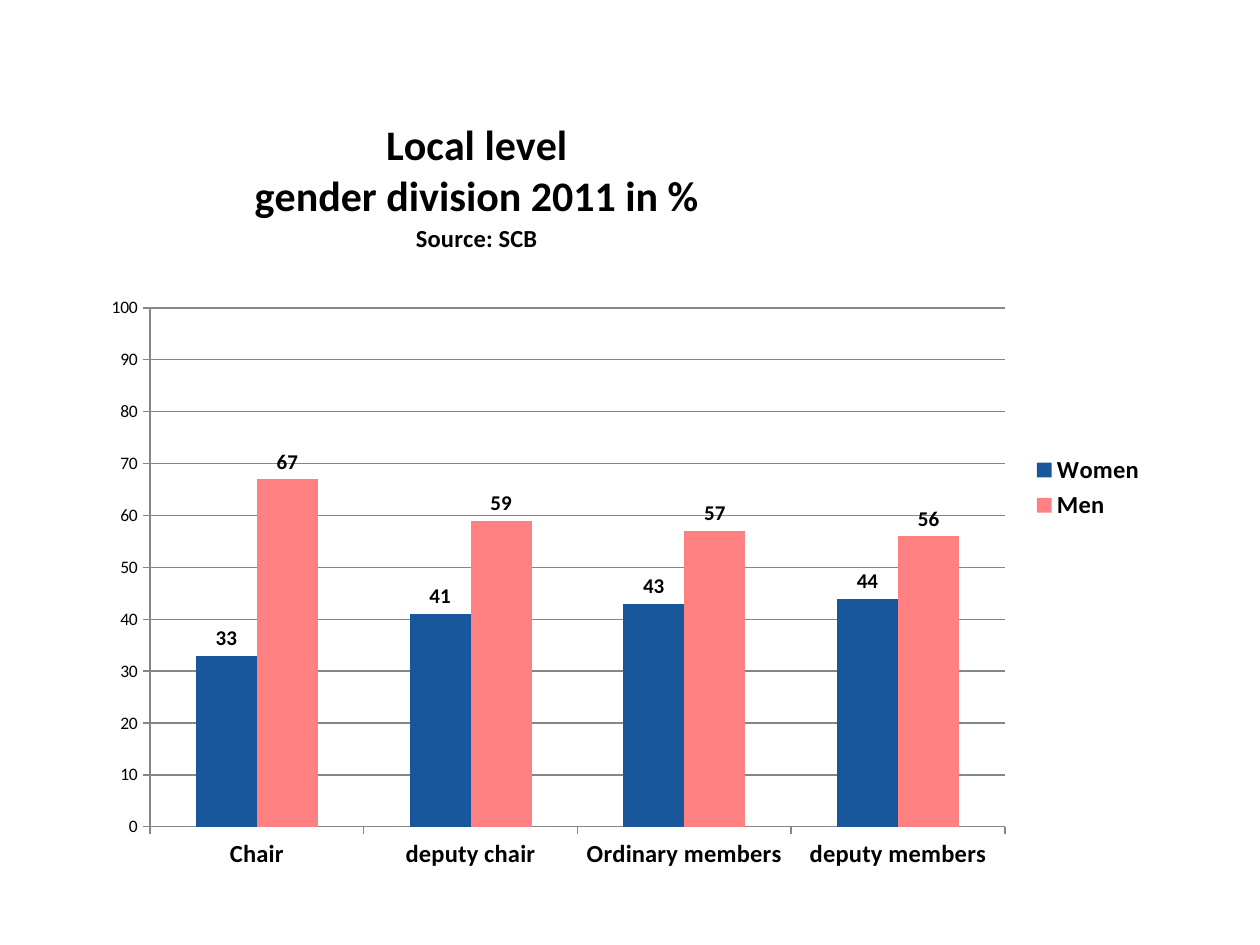
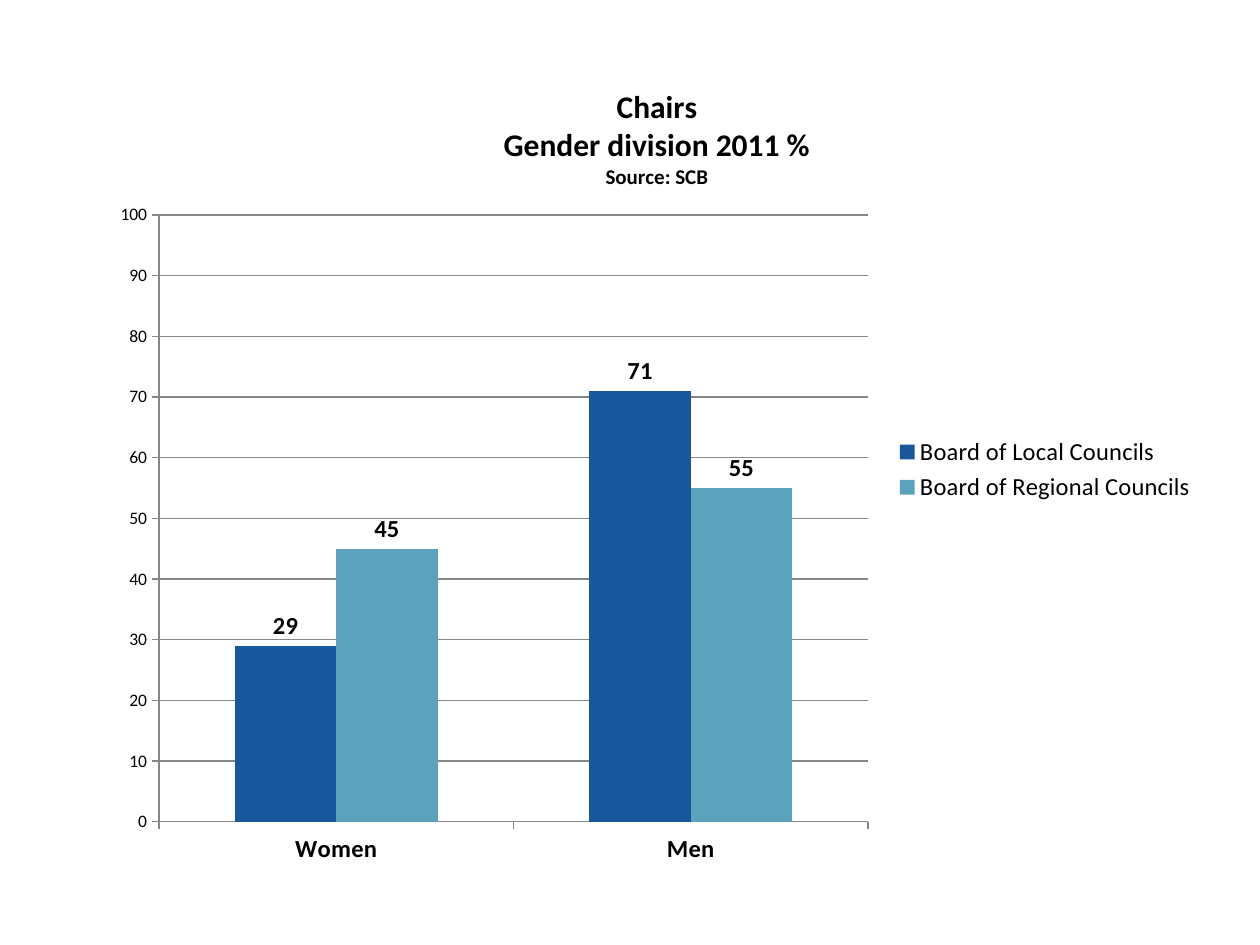
import pptx
import pptx.chart.data
import pptx.dml.color
import pptx.enum.chart
import pptx.oxml
import pptx.oxml.ns
import pptx.util
from dataclasses import dataclass

PX = 914400 / 126
SLIDE_SIZE = (1260, 945)


@dataclass(frozen=True)
class Theme:
    font: str = "Calibri"
    text: str = "000000"
    line: str = "868686"
    blue: str = "18579B"
    pink: str = "FF8080"
    teal: str = "5BA2BC"
    base_size: int = 10
    label_size: int = 14
    line_width: float = 0.75


THEME = Theme()

DIVISIONS = [
    {
        "heading": [("Local level", 24), ("gender division 2011 in %", 24), ("Source: SCB", 14)],
        "positions": ["Chair", "deputy chair", "Ordinary members", "deputy members"],
        "groups": [
            ("Women", THEME.blue, [33, 41, 43, 44]),
            ("Men", THEME.pink, [67, 59, 57, 56]),
        ],
        "frame": (91, 84, 1071, 801),
        "plot": (150, 308, 855, 519),
        "heading_at": (251, 115),
        "legend_at": (1029, 450),
        "value_size": 12,
        "legend_bold": True,
    },
    {
        "heading": [("Chairs", 18), ("Gender division 2011 %", 18), ("Source: SCB", 12)],
        "positions": ["Women", "Men"],
        "groups": [
            ("Board of Local Councils", THEME.blue, [29, 71]),
            ("Board of Regional Councils", THEME.teal, [45, 55]),
        ],
        "frame": (98, 52, 1108, 829),
        "plot": (159, 215, 709, 607),
        "heading_at": (500, 82),
        "legend_at": (892, 432),
        "value_size": 14,
        "legend_bold": False,
    },
]


def px(length):
    return pptx.util.Emu(round(length * PX))


def rgb(color):
    return pptx.dml.color.RGBColor.from_string(color)


def apply(target, **values):
    for name, value in values.items():
        setattr(target, name, value)


def style_font(font, size, bold=False):
    apply(font, name=THEME.font, size=pptx.util.Pt(size), bold=bold)
    font.color.rgb = rgb(THEME.text)


def style_line(line):
    line.color.rgb = rgb(THEME.line)
    line.width = pptx.util.Pt(THEME.line_width)


def place(chart, part, after, frame, box):
    qn = pptx.oxml.ns.qn
    parent = chart.element.find(".//" + qn(part))
    for old in parent.findall(qn("c:layout")):
        parent.remove(old)
    left, top, width, height = frame
    fractions = [(box[0] - left) / width, (box[1] - top) / height]
    fractions += [length / whole for length, whole in zip(box[2:], (width, height))]
    target = '<c:layoutTarget val="inner"/>' if len(box) == 4 else ""
    modes = '<c:xMode val="edge"/><c:yMode val="edge"/>'
    values = "".join(f'<c:{key} val="{value:.4f}"/>' for key, value in zip("xywh", fractions))
    layout = pptx.oxml.parse_xml(
        f'<c:layout {pptx.oxml.ns.nsdecls("c")}>'
        f"<c:manualLayout>{target}{modes}{values}</c:manualLayout></c:layout>"
    )
    if after:
        parent.find(qn(after)).addnext(layout)
    else:
        parent.insert(0, layout)


def write_heading(chart, lines):
    chart.has_title = True
    heading = chart.chart_title.text_frame
    for index, (words, size) in enumerate(lines):
        paragraph = heading.add_paragraph() if index else heading.paragraphs[0]
        run = paragraph.add_run()
        run.text = words
        style_font(run.font, size, True)


def style_axes(chart):
    outside = pptx.enum.chart.XL_TICK_MARK.OUTSIDE
    positions, percent = chart.category_axis, chart.value_axis
    for axis in (positions, percent):
        axis.major_tick_mark = outside
        style_line(axis.format.line)
    style_font(positions.tick_labels.font, THEME.label_size, True)
    style_font(percent.tick_labels.font, THEME.base_size)
    apply(percent, minimum_scale=0, maximum_scale=100, major_unit=10, has_major_gridlines=True)
    style_line(percent.major_gridlines.format.line)


def style_groups(chart, division):
    bars = chart.plots[0]
    apply(bars, gap_width=150, overlap=0, vary_by_categories=False)
    for series, (_, color, _) in zip(bars.series, division["groups"]):
        series.format.fill.solid()
        series.format.fill.fore_color.rgb = rgb(color)
        labels = series.data_labels
        apply(labels, show_value=True, position=pptx.enum.chart.XL_LABEL_POSITION.OUTSIDE_END)
        style_font(labels.font, division["value_size"], True)


def add_division(slide, division):
    data = pptx.chart.data.CategoryChartData(number_format="0")
    data.categories = division["positions"]
    for name, _, values in division["groups"]:
        data.add_series(name, values)
    frame = division["frame"]
    chart = slide.shapes.add_chart(
        pptx.enum.chart.XL_CHART_TYPE.COLUMN_CLUSTERED, *map(px, frame), data
    ).chart
    style_font(chart.font, THEME.base_size)
    write_heading(chart, division["heading"])
    style_axes(chart)
    style_groups(chart, division)
    chart.has_legend = True
    apply(chart.legend, position=pptx.enum.chart.XL_LEGEND_POSITION.RIGHT, include_in_layout=False)
    style_font(chart.legend.font, THEME.label_size, division["legend_bold"])
    for part, after, key in (
        ("c:title", "c:tx", "heading_at"),
        ("c:plotArea", None, "plot"),
        ("c:legend", "c:legendPos", "legend_at"),
    ):
        place(chart, part, after, frame, division[key])


def main():
    deck = pptx.Presentation()
    deck.slide_width, deck.slide_height = map(px, SLIDE_SIZE)
    for division in DIVISIONS:
        add_division(deck.slides.add_slide(deck.slide_layouts[6]), division)
    deck.save("out.pptx")


if __name__ == "__main__":
    main()
